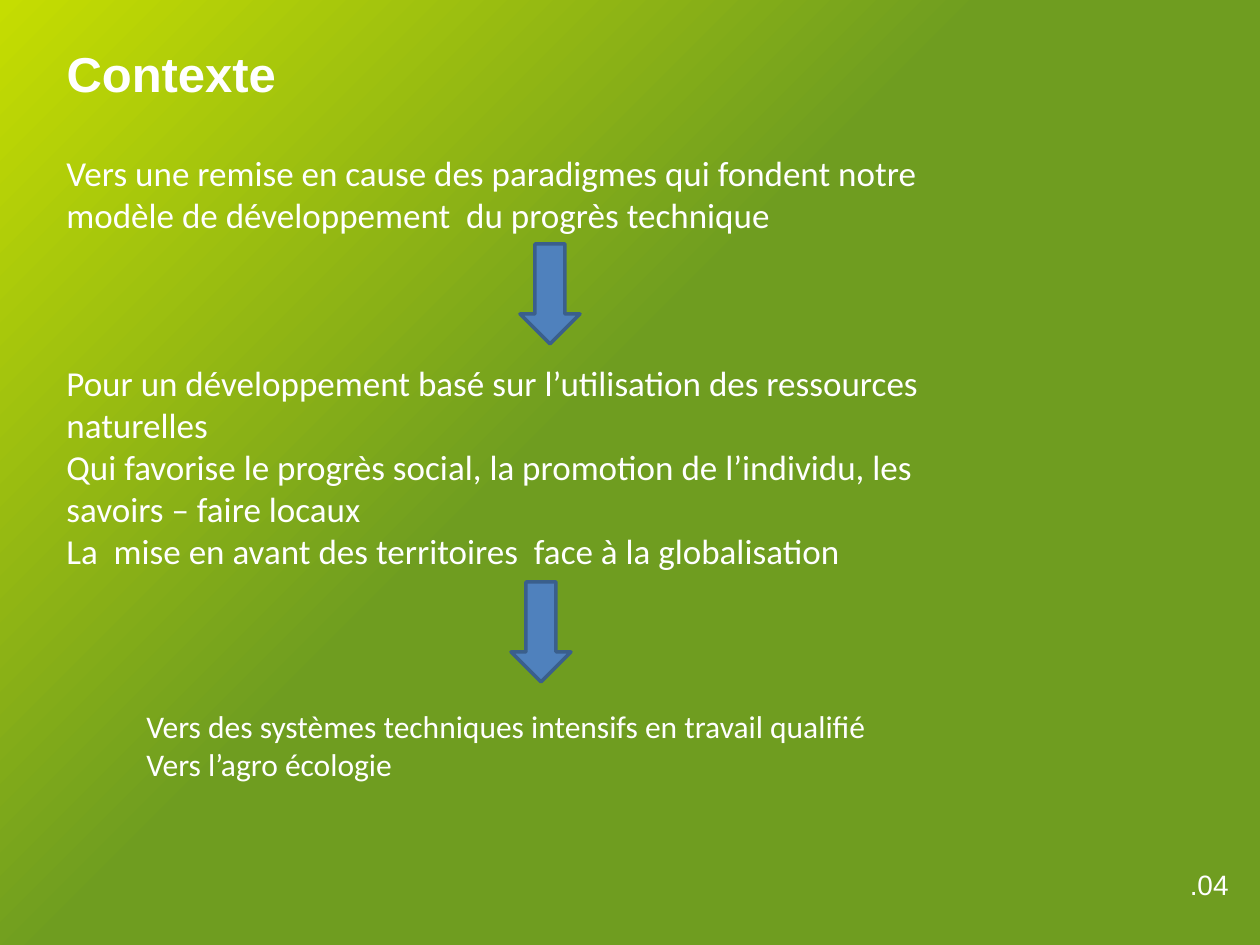
"""Build the "Contexte" slide."""
from lxml import etree
from pptx import Presentation
from pptx import util as u
from pptx.dml.color import RGBColor
from pptx.enum import shapes, text
from pptx.oxml.ns import qn

PX_PER_INCH = 126
WHITE = "FFFFFF"


def px(*lengths):
    """Turn pixel lengths into EMU."""
    return [u.Emu(round(length * 914400 / PX_PER_INCH)) for length in lengths]


def colour(hex_string):
    """Return the colour for a hex string."""
    return RGBColor.from_string(hex_string)


def paint_background(slide, inner, outer):
    """Fill the background with a gradient spreading from the lower right corner."""
    fill = slide.background.fill
    fill.gradient()
    for stop, position, tint in zip(fill.gradient_stops, (0.55, 1), (inner, outer)):
        stop.position = position
        stop.color.rgb = colour(tint)
    gradient = slide.element.find(".//" + qn("a:gradFill"))
    linear = gradient.find(qn("a:lin"))
    path = etree.Element(qn("a:path"), {"path": "circle"})
    etree.SubElement(path, qn("a:fillToRect"), {"l": "100000", "t": "100000"})
    gradient.replace(linear, path)


def write(shape, lines, size, font, bold=False, align=text.PP_ALIGN.LEFT):
    """Write white paragraphs into a shape and return them."""
    frame = shape.text_frame
    frame.word_wrap = True
    frame.auto_size = text.MSO_AUTO_SIZE.NONE
    frame.vertical_anchor = text.MSO_ANCHOR.TOP
    frame.text = "\n".join(lines)
    for paragraph in frame.paragraphs:
        paragraph.alignment = align
        paragraph.font.size = u.Pt(size)
        paragraph.font.name = font
        paragraph.font.bold = bold
        paragraph.font.color.rgb = colour(WHITE)
    return frame.paragraphs


def add_title(slide, box, title):
    """Place and format the title placeholder."""
    shape = slide.shapes.title
    shape.left, shape.top, shape.width, shape.height = px(*box)
    write(shape, [title], 28, "Arial", bold=True)


def add_text(slide, box, lines, size, font="Calibri", **style):
    """Add a text box and return its paragraphs."""
    return write(slide.shapes.add_textbox(*px(*box)), lines, size, font, **style)


def add_down_arrow(slide, left, top):
    """Add a blue block arrow pointing down."""
    arrow = slide.shapes.add_shape(
        shapes.MSO_SHAPE.DOWN_ARROW, *px(left, top, 60, 100))
    arrow.shadow.inherit = False
    arrow.fill.solid()
    arrow.fill.fore_color.rgb = colour("4F81BD")
    arrow.line.color.rgb = colour("3A5F8C")
    arrow.line.width = u.Pt(2)


def main():
    """Build and save the slide."""
    presentation = Presentation()
    presentation.slide_width, presentation.slide_height = px(1260, 945)
    slide = presentation.slides.add_slide(presentation.slide_layouts[5])
    paint_background(slide, "6F9D20", "C5DD01")
    add_title(slide, (54, 37, 932, 72), "Contexte")
    paragraphs = add_text(slide, (54, 145, 969, 475), [
        "Vers une remise en cause des paradigmes qui fondent notre "
        "modèle de développement  du progrès technique",
        "Pour un développement basé sur l’utilisation des ressources naturelles",
        "Qui favorise le progrès social, la promotion de l’individu, "
        "les savoirs – faire locaux",
        "La  mise en avant des territoires  face à la globalisation",
    ], 20)
    paragraphs[1].space_before = u.Pt(72)
    add_text(slide, (1086, 861, 155, 34), [".04"], 16, "Arial",
             align=text.PP_ALIGN.RIGHT)
    add_down_arrow(slide, 520, 244)
    add_down_arrow(slide, 511, 582)
    add_text(slide, (134, 701, 784, 89), [
        "Vers des systèmes techniques intensifs en travail qualifié",
        "Vers l’agro écologie",
    ], 18)
    presentation.save("out.pptx")


if __name__ == "__main__":
    main()
